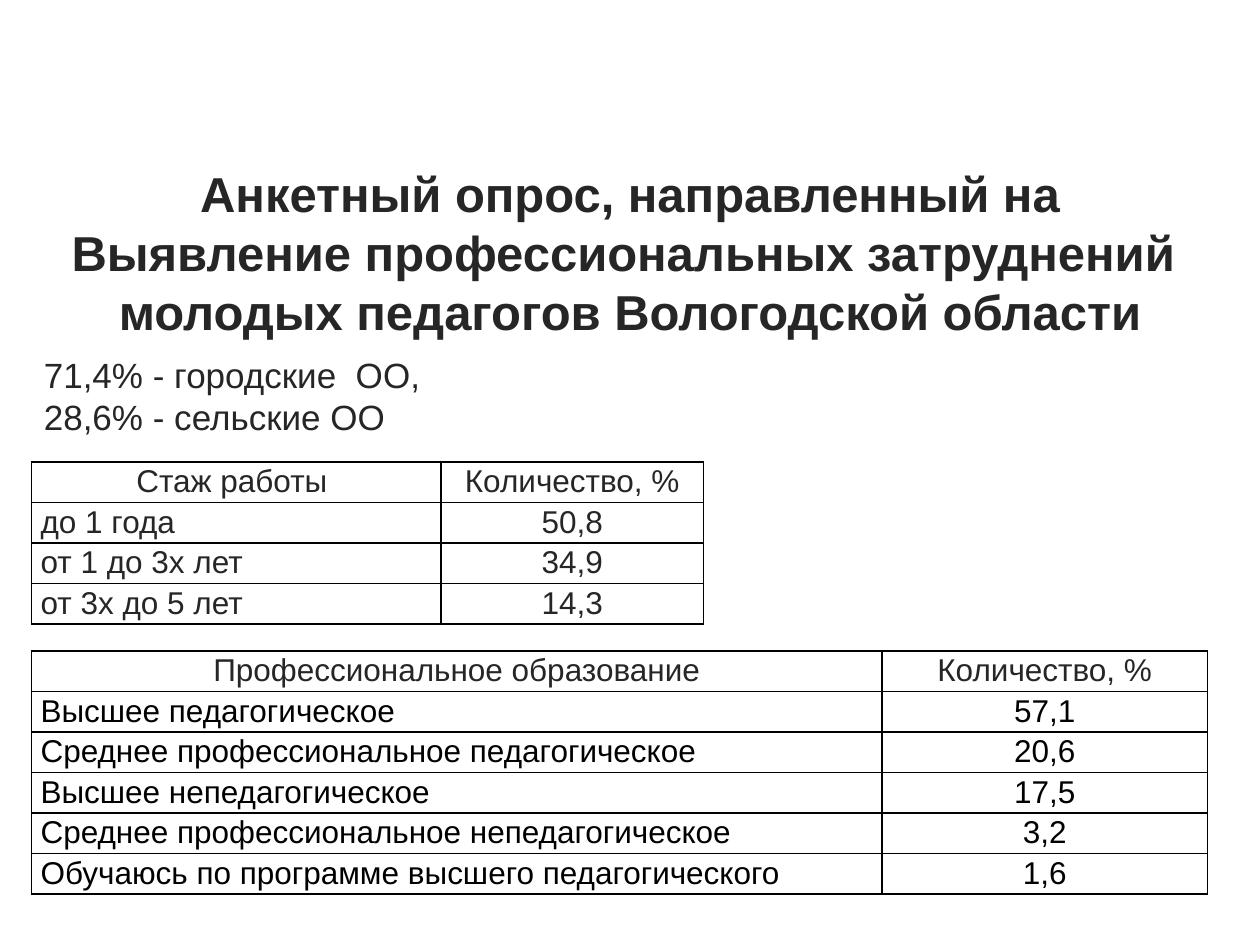
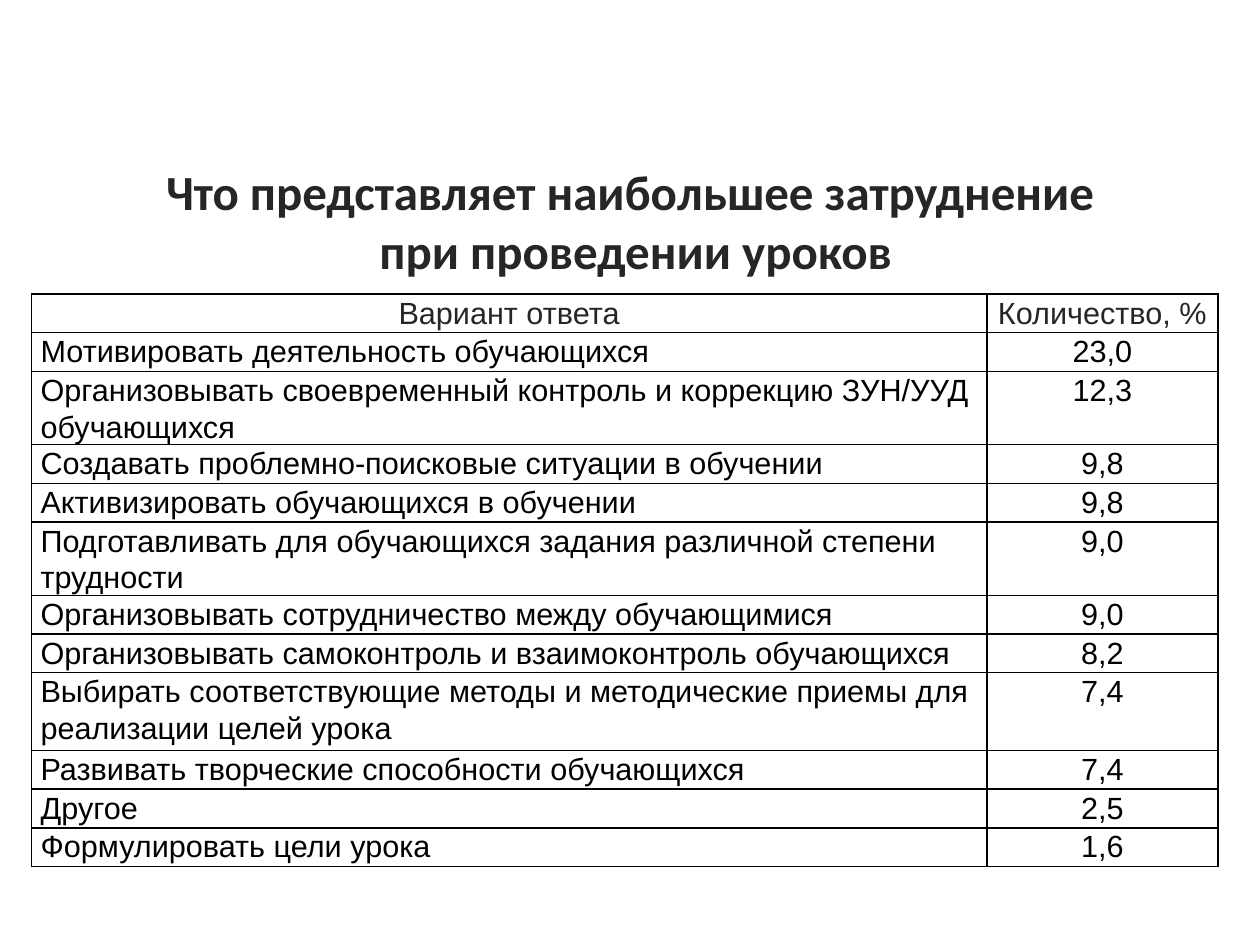
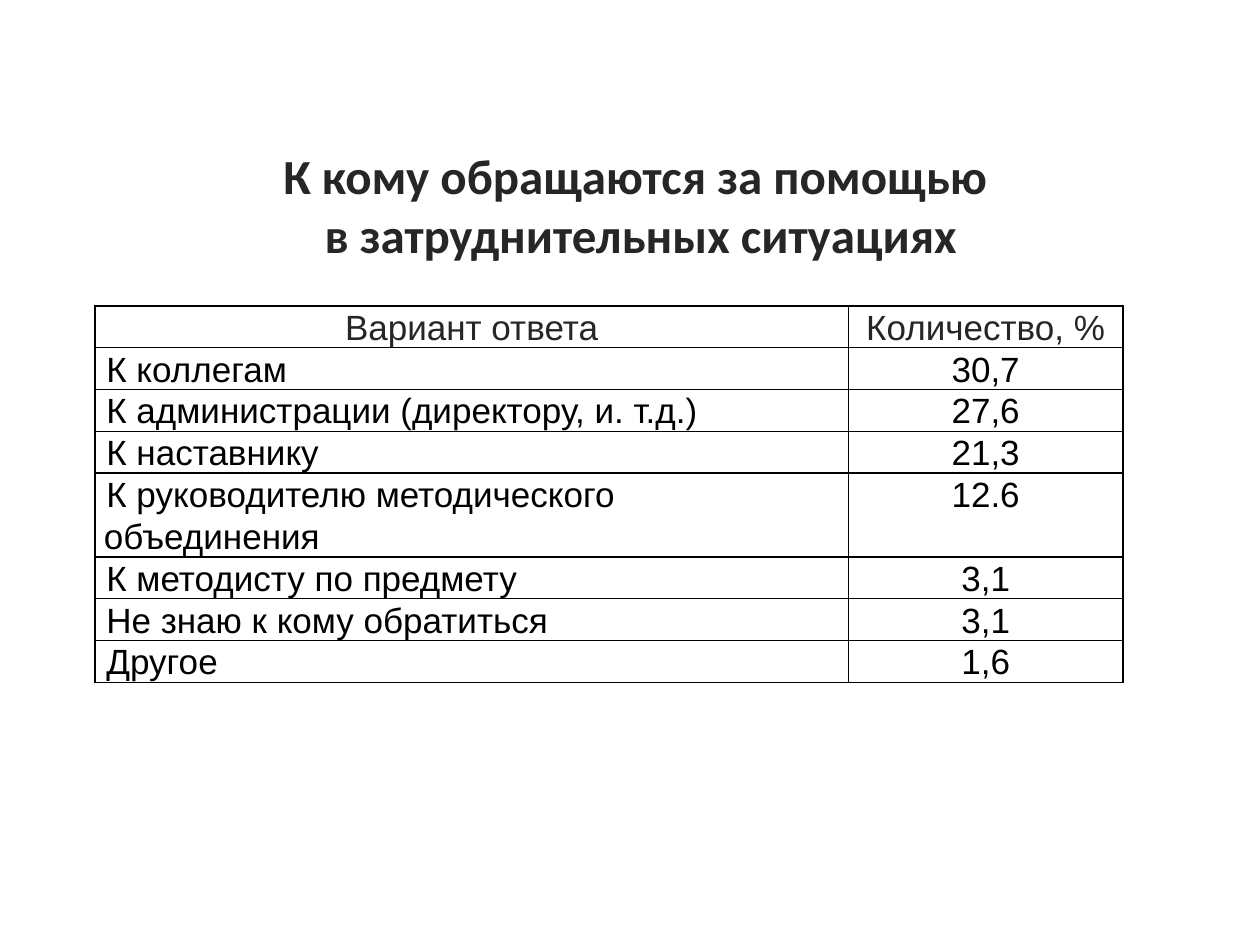
from dataclasses import dataclass
from typing import Any

from lxml.etree import SubElement
from pptx import Presentation
from pptx.dml.color import RGBColor
from pptx.enum.text import MSO_ANCHOR, MSO_AUTO_SIZE, PP_ALIGN
from pptx.oxml.ns import qn
from pptx.slide import Slide
from pptx.util import Pt

COLORS = {"heading": "262626", "body": "000000", "border": "000000"}
TITLE_FRAME = {
    "word_wrap": False,
    "auto_size": MSO_AUTO_SIZE.NONE,
    "vertical_anchor": MSO_ANCHOR.MIDDLE,
}
SHARES_FRAME = {
    "word_wrap": True,
    "auto_size": MSO_AUTO_SIZE.SHAPE_TO_FIT_TEXT,
    "vertical_anchor": MSO_ANCHOR.MIDDLE,
}
CELL_FORMAT = {
    "margin_left": Pt(5.2),
    "margin_right": Pt(5.2),
    "margin_top": Pt(0),
    "margin_bottom": Pt(0),
    "vertical_anchor": MSO_ANCHOR.TOP,
}
PLAIN_TABLE = {"first_row": False, "horz_banding": False}
PERCENT = "Количество, %"


@dataclass
class TextBlock:
    lines: list[str]
    left: float
    top: float
    width: float
    height: float
    font: str = "Calibri"
    size: float = 28
    bold: bool = True
    align: PP_ALIGN = PP_ALIGN.CENTER


@dataclass
class SurveyTable:
    heading: str
    answers: list[tuple[str, str]]
    left: float
    top: float
    height: float
    columns: tuple[float, float]
    row_height: float
    tall_rows: dict[int, float]
    size: float
    color: str = "body"
    indent: float = 0


@dataclass
class SurveyPage:
    title: TextBlock
    tables: list[SurveyTable]
    shares: TextBlock | None = None


def apply_format(target: Any, values: dict[str, Any]) -> None:
    for name, value in values.items():
        setattr(target, name, value)


def style_font(font: Any, name: str, size: float, color: str, bold: bool = False) -> None:
    apply_format(font, {"name": name, "size": Pt(size), "bold": bold})
    font.color.rgb = RGBColor.from_string(COLORS[color])


def fill_text(box: Any, block: TextBlock, frame_format: dict[str, Any]) -> None:
    apply_format(box, {
        "left": Pt(block.left),
        "top": Pt(block.top),
        "width": Pt(block.width),
        "height": Pt(block.height),
    })
    frame = box.text_frame
    apply_format(frame, frame_format)
    frame.text = "\n".join(block.lines)
    for para in frame.paragraphs:
        para.alignment = block.align
        for span in para.runs:
            style_font(span.font, block.font, block.size, "heading", block.bold)


def set_title_outline(title: Any) -> None:
    geometry = SubElement(title._element.spPr, qn("a:prstGeom"), prst="roundRect")
    adjustments = SubElement(geometry, qn("a:avLst"))
    SubElement(adjustments, qn("a:gd"), name="adj", fmla="val 0")


def add_borders(cell: Any) -> None:
    properties = cell._tc.get_or_add_tcPr()
    for side in ("lnL", "lnR", "lnT", "lnB"):
        line = SubElement(properties, qn(f"a:{side}"), w=str(Pt(1)))
        fill = SubElement(line, qn("a:solidFill"))
        SubElement(fill, qn("a:srgbClr"), val=COLORS["border"])


def draw_table(page: Slide, survey: SurveyTable) -> None:
    rows = [(survey.heading, PERCENT), *survey.answers]
    frame = page.shapes.add_table(
        len(rows), len(survey.columns), Pt(survey.left), Pt(survey.top),
        Pt(sum(survey.columns)), Pt(survey.height),
    )
    table = frame.table
    apply_format(table, PLAIN_TABLE)
    for column, width in zip(table.columns, survey.columns):
        column.width = Pt(width)
    for row_index, texts in enumerate(rows):
        table.rows[row_index].height = Pt(survey.tall_rows.get(row_index, survey.row_height))
        for column_index, text in enumerate(texts):
            is_answer = row_index > 0 and column_index == 0
            cell = table.cell(row_index, column_index)
            apply_format(cell, CELL_FORMAT)
            add_borders(cell)
            cell.fill.background()
            cell.text = text
            para = cell.text_frame.paragraphs[0]
            apply_format(para, {
                "alignment": PP_ALIGN.LEFT if is_answer else PP_ALIGN.CENTER,
                "line_spacing": 1.07,
            })
            if is_answer and survey.indent:
                para._p.get_or_add_pPr().set("indent", str(Pt(survey.indent)))
            color = survey.color if row_index else "heading"
            style_font(para.runs[0].font, "Arial", survey.size, color)
    frame.height = Pt(survey.height)


PAGES = [
    SurveyPage(
        title=TextBlock(
            [
                "Анкетный опрос, направленный на",
                "Выявление профессиональных затруднений ",
                "молодых педагогов Вологодской области",
            ],
            24, 84, 672, 120, font="Arial",
        ),
        shares=TextBlock(
            ["71,4% - городские  ОО,", "28,6% - сельские ОО "],
            18, 198, 612, 55.5, font="Arial", size=20, bold=False, align=PP_ALIGN.JUSTIFY,
        ),
        tables=[
            SurveyTable(
                "Стаж работы ",
                [("до 1 года", "50,8"), ("от 1 до 3х лет", "34,9"), ("от 3х до 5 лет", "14,3")],
                18, 264, 86, (234, 150), 0, {}, 18, color="heading",
            ),
            SurveyTable(
                "Профессиональное образование",
                [
                    ("Высшее педагогическое", "57,1"),
                    ("Среднее профессиональное педагогическое", "20,6"),
                    ("Высшее непедагогическое", "17,5"),
                    ("Среднее профессиональное непедагогическое", "3,2"),
                    ("Обучаюсь по программе высшего педагогического", "1,6"),
                ],
                18, 372, 138.9, (486, 186), 23.15, {}, 18,
            ),
        ],
    ),
    SurveyPage(
        title=TextBlock(
            ["Что представляет наибольшее затруднение", " при проведении уроков"],
            24, 90, 672, 72,
        ),
        tables=[
            SurveyTable(
                "Вариант ответа",
                [
                    ("Мотивировать деятельность обучающихся", "23,0"),
                    ("Организовывать своевременный контроль и коррекцию ЗУН/УУД обучающихся", "12,3"),
                    ("Создавать проблемно-поисковые ситуации в обучении", "9,8"),
                    ("Активизировать обучающихся в обучении", "9,8"),
                    ("Подготавливать для обучающихся задания различной степени трудности", "9,0"),
                    ("Организовывать сотрудничество между обучающимися", "9,0"),
                    ("Организовывать самоконтроль и взаимоконтроль обучающихся", "8,2"),
                    ("Выбирать соответствующие методы и методические приемы для реализации целей урока", "7,4"),
                    ("Развивать творческие способности обучающихся", "7,4"),
                    ("Другое", "2,5"),
                    ("Формулировать цели урока", "1,6"),
                ],
                18, 168, 327, (546, 132), 22.13, {2: 41.7, 5: 41.7, 8: 44.4}, 17.5,
            ),
        ],
    ),
    SurveyPage(
        title=TextBlock(
            ["К кому обращаются за помощью ", "в затруднительных ситуациях"],
            30, 90, 672, 54,
        ),
        tables=[
            SurveyTable(
                "Вариант ответа",
                [
                    ("К коллегам", "30,7"),
                    ("К администрации (директору, и. т.д.)", "27,6"),
                    ("К наставнику", "21,3"),
                    ("К руководителю методического объединения", "12.6"),
                    ("К методисту по предмету", "3,1"),
                    ("Не знаю к кому обратиться", "3,1"),
                    ("Другое", "1,6"),
                ],
                54.2, 174.8, 215.1, (430.6, 157), 23.9, {4: 47.8}, 20, indent=1.4,
            ),
        ],
    ),
]


def main() -> None:
    deck = Presentation()
    apply_format(deck, {"slide_width": Pt(720), "slide_height": Pt(540)})
    for survey_page in PAGES:
        page = deck.slides.add_slide(deck.slide_layouts.get_by_name("Title Only"))
        fill_text(page.shapes.title, survey_page.title, TITLE_FRAME)
        set_title_outline(page.shapes.title)
        if survey_page.shares:
            box = page.shapes.add_textbox(Pt(0), Pt(0), Pt(0), Pt(0))
            fill_text(box, survey_page.shares, SHARES_FRAME)
        for survey in survey_page.tables:
            draw_table(page, survey)
    deck.save("out.pptx")


if __name__ == "__main__":
    main()
